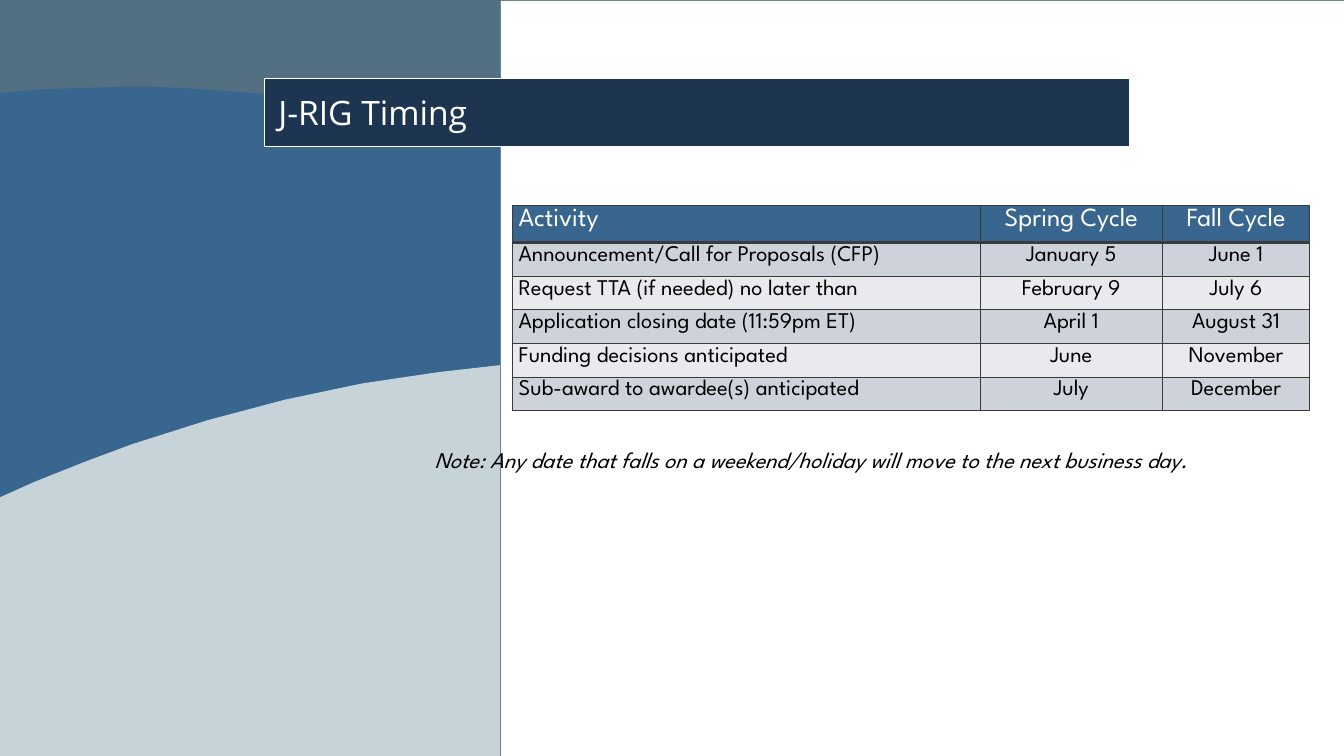
from dataclasses import dataclass

from lxml.etree import SubElement
from pptx import Presentation
from pptx.dml.color import RGBColor
from pptx.enum.shapes import MSO_SHAPE
from pptx.enum.text import MSO_ANCHOR, PP_ALIGN
from pptx.oxml.ns import qn
from pptx.util import Cm, Pt

SLATE_BACK = RGBColor(0x54, 0x70, 0x7B)
SLATE = RGBColor(0x53, 0x6F, 0x82)
BLUE = RGBColor(0x38, 0x66, 0x8E)
MIST = RGBColor(0xC6, 0xD3, 0xD8)
TEAL = RGBColor(0x65, 0x88, 0x91)
NAVY = RGBColor(0x1E, 0x35, 0x51)
WHITE = RGBColor(0xFF, 0xFF, 0xFF)
BLACK = RGBColor(0, 0, 0)
CHARCOAL = RGBColor(0x3C, 0x3B, 0x3B)
BAND_FILLS = (RGBColor(0xCE, 0xD3, 0xDB), RGBColor(0xE8, 0xEA, 0xEE))

BODY_FONT = "League Spartan"
TITLE_FONT = "Open Sans"
SLIDE_W, SLIDE_H = 50.8, 28.58


@dataclass
class Wave:
    """A filled outline, its points in centimetres."""
    color: RGBColor
    points: list[tuple[float, float]]


WAVES = [
    Wave(BLUE, [
        (SLIDE_W, 0), (0, 0), (0, 21.18), (3.94, 23.37), (9.12, 25.65),
        (14.53, 27.43), (19.38, 28.55), (41.15, 28.52), (45.49, 27.53),
        (SLIDE_W, 25.83)]),
    Wave(SLATE, [
        (SLIDE_W, 0), (0, 0), (0, 3.51), (1.55, 3.38), (2.97, 3.33),
        (4.42, 3.28), (5.84, 3.28), (7.29, 3.35), (8.76, 3.45),
        (10.21, 3.58), (11.66, 3.78), (13.13, 4.01), (15.82, 4.57),
        (19.63, 5.64), (25.04, 7.77), (30.07, 10.52), (34.72, 13.79),
        (38.89, 17.55), (42.57, 21.77), (45.75, 26.37), (46.99, SLIDE_H),
        (SLIDE_W, SLIDE_H)]),
    Wave(MIST, [
        (0, SLIDE_H), (0, 18.8), (1.32, 18.21), (3.15, 17.48), (5, 16.79),
        (7.87, 15.88), (10.77, 15.11), (13.67, 14.5), (16.56, 14.07),
        (19.46, 13.74), (22.35, 13.59), (25.22, 13.56), (28.07, 13.69),
        (30.91, 13.94), (33.73, 14.35), (36.5, 14.88), (39.24, 15.54),
        (41.96, 16.33), (44.63, 17.25), (47.24, 18.29), (49.78, 19.46),
        (SLIDE_W, 19.96), (SLIDE_W, SLIDE_H)]),
]

SCHEDULE = [
    ("Activity", "Spring Cycle", "Fall Cycle"),
    ("Announcement/Call for Proposals (CFP)", "January 5", "June 1"),
    ("Request TTA (if needed) no later than", "February 9", "July 6"),
    ("Application closing date (11:59pm ET)", "April 1", "August 31"),
    ("Funding decisions anticipated", "June", "November"),
    ("Sub-award to awardee(s) anticipated", "July", "December"),
]
COLUMN_WIDTHS = (17.7, 6.88, 5.58)
HEADER_HEIGHT, ROW_HEIGHT = 1.42, 1.27


def add_run(paragraph, text: str, font_name: str, size: float,
            color: RGBColor, italic: bool = False) -> None:
    run = paragraph.add_run()
    run.text = text
    run.font.name = font_name
    run.font.size = Pt(size)
    run.font.color.rgb = color
    run.font.bold = False
    run.font.italic = italic


def paint(shape, fill: RGBColor, line: RGBColor | None = None) -> None:
    shape.fill.solid()
    shape.fill.fore_color.rgb = fill
    if line is None:
        shape.line.fill.background()
    else:
        shape.line.color.rgb = line
        shape.line.width = Pt(0.75)


def add_wave(slide, wave: Wave) -> None:
    start, *rest = [(Cm(x), Cm(y)) for x, y in wave.points]
    builder = slide.shapes.build_freeform(*start, scale=1.0)
    builder.add_line_segments(rest, close=True)
    shape = builder.convert_to_shape()
    shape.shadow.inherit = False
    paint(shape, wave.color)


def add_white_panel(slide) -> None:
    left = 18.9
    panel = slide.shapes.add_shape(
        MSO_SHAPE.RECTANGLE, Cm(left), 0, Cm(SLIDE_W - left), Cm(SLIDE_H))
    panel.shadow.inherit = False
    paint(panel, WHITE, TEAL)


def format_title(slide) -> None:
    title = slide.shapes.title
    title.left, title.top = Cm(10.01), Cm(2.95)
    title.width, title.height = Cm(32.66), Cm(2.57)
    paint(title, NAVY, WHITE)
    frame = title.text_frame
    frame.vertical_anchor = MSO_ANCHOR.MIDDLE
    frame.margin_left = frame.margin_right = Cm(0.51)
    frame.margin_top = frame.margin_bottom = Cm(0)
    paragraph = frame.paragraphs[0]
    paragraph.alignment = PP_ALIGN.LEFT
    add_run(paragraph, "J-RIG Timing", TITLE_FONT, 36, WHITE)
    # Bring the title in front of the background waves.
    title._element.getparent().append(title._element)


def set_borders(cell, top: float, bottom: float) -> None:
    """Border the cell; top and bottom are line widths in points."""
    properties = cell._tc.get_or_add_tcPr()
    for side, width in (("L", 1), ("R", 1), ("T", top), ("B", bottom)):
        line = SubElement(properties, qn(f"a:ln{side}"), w=str(Pt(width)))
        fill = SubElement(line, qn("a:solidFill"))
        SubElement(fill, qn("a:srgbClr"), val=str(CHARCOAL))


def add_schedule(slide) -> None:
    heights = [HEADER_HEIGHT] + [ROW_HEIGHT] * (len(SCHEDULE) - 1)
    table = slide.shapes.add_table(
        len(SCHEDULE), len(COLUMN_WIDTHS), Cm(19.35), Cm(7.75),
        Cm(sum(COLUMN_WIDTHS)), Cm(sum(heights))).table
    for column, width in zip(table.columns, COLUMN_WIDTHS):
        column.width = Cm(width)
    for r, (entries, height) in enumerate(zip(SCHEDULE, heights)):
        table.rows[r].height = Cm(height)
        is_header = r == 0
        for c, entry in enumerate(entries):
            cell = table.cell(r, c)
            set_borders(cell, top=3 if r == 1 else 1,
                        bottom=3 if is_header else 1)
            cell.fill.solid()
            cell.fill.fore_color.rgb = (
                BLUE if is_header else BAND_FILLS[(r - 1) % 2])
            paragraph = cell.text_frame.paragraphs[0]
            paragraph.alignment = PP_ALIGN.CENTER if c else PP_ALIGN.LEFT
            add_run(paragraph, entry, BODY_FONT, 28 if is_header else 24,
                    WHITE if is_header else BLACK)


def add_note(slide) -> None:
    note = slide.shapes.add_textbox(Cm(16.18), Cm(16.74), Cm(34.11), Cm(1.27))
    note.text_frame.word_wrap = True
    add_run(note.text_frame.paragraphs[0],
            "Note: Any date that falls on a weekend/holiday will move to "
            "the next business day.", BODY_FONT, 24, BLACK, italic=True)


def main() -> None:
    presentation = Presentation()
    presentation.slide_width = Cm(SLIDE_W)
    presentation.slide_height = Cm(SLIDE_H)
    slide = presentation.slides.add_slide(presentation.slide_layouts[5])
    slide.background.fill.solid()
    slide.background.fill.fore_color.rgb = SLATE_BACK
    for wave in WAVES:
        add_wave(slide, wave)
    add_white_panel(slide)
    format_title(slide)
    add_schedule(slide)
    add_note(slide)
    presentation.save("out.pptx")


if __name__ == "__main__":
    main()
